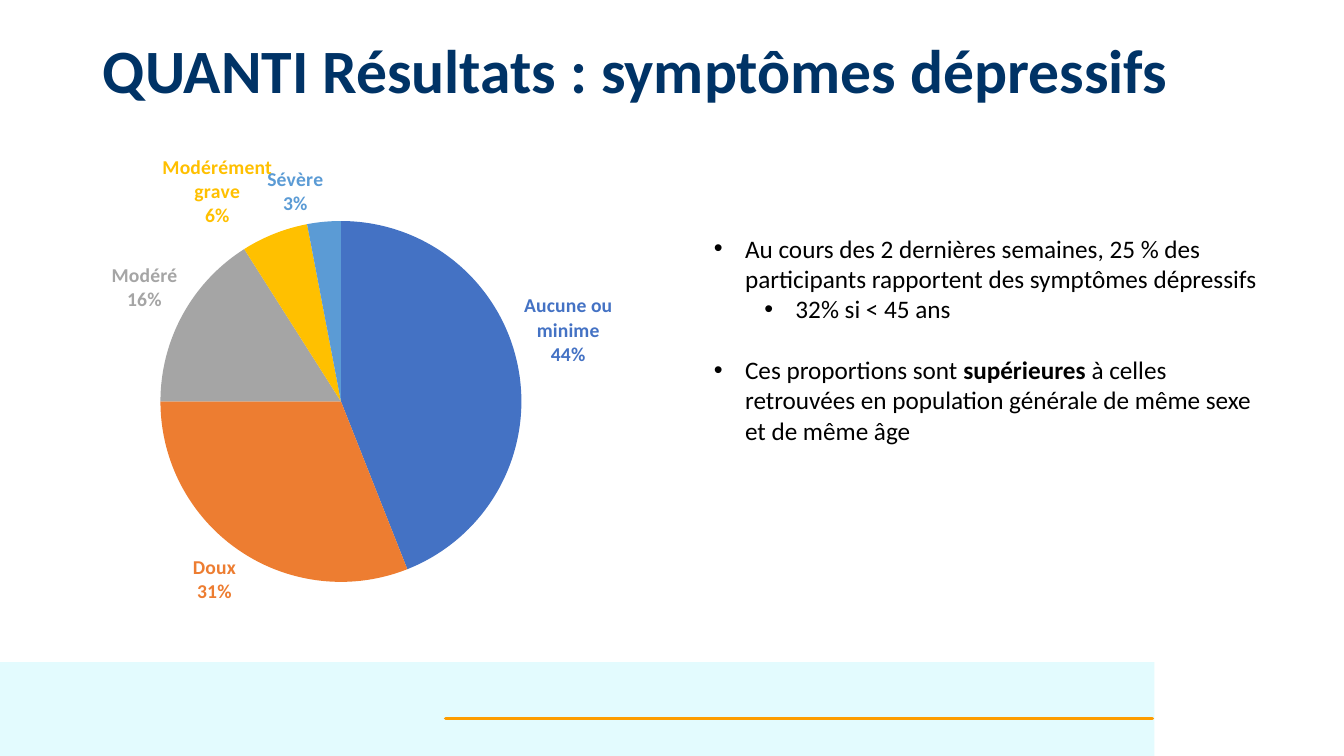
from lxml.etree import SubElement
from pptx import Presentation
from pptx.chart.data import CategoryChartData
from pptx.dml.color import RGBColor
from pptx.enum.chart import XL_CHART_TYPE, XL_LABEL_POSITION
from pptx.enum.shapes import MSO_CONNECTOR, MSO_SHAPE
from pptx.enum.text import MSO_ANCHOR, PP_ALIGN
from pptx.oxml import parse_xml
from pptx.oxml.ns import nsdecls, qn
from pptx.util import Inches, Pt

FONT = "Calibri"
NAVY = RGBColor(0x00, 0x33, 0x66)
BLACK = RGBColor(0x00, 0x00, 0x00)
PALE_CYAN = RGBColor(0xE3, 0xFB, 0xFE)
ORANGE = RGBColor(0xFD, 0x9C, 0x00)

SEVERITIES = [
    ("Aucune ou minime", 44, RGBColor(0x44, 0x72, 0xC4)),
    ("Doux", 31, RGBColor(0xED, 0x7D, 0x31)),
    ("Modéré", 16, RGBColor(0xA5, 0xA5, 0xA5)),
    ("Modérément grave", 6, RGBColor(0xFF, 0xC0, 0x00)),
    ("Sévère", 3, RGBColor(0x5B, 0x9B, 0xD5)),
]

FINDINGS = [
    (0, 0, [("Au cours des 2 dernières semaines, 25 % des participants "
             "rapportent des symptômes dépressifs", False)]),
    (1, 0, [("32% si < 45 ans", False)]),
    (0, 22, [("Ces proportions sont ", False), ("supérieures", True),
             (" à celles retrouvées en population générale de même sexe "
              "et de même âge", False)]),
]


def set_font(font, size, color=BLACK, bold=False):
    """Apply the slide's typeface with the given size, colour and weight."""
    font.name, font.size, font.bold = FONT, Pt(size), bold
    font.color.rgb = color


def add_text(paragraph, text, *, size=18, color=BLACK, bold=False):
    """Append a formatted run to a paragraph."""
    run = paragraph.add_run()
    run.text = text
    set_font(run.font, size, color, bold)


def place(shape, left, top, width, height):
    """Move a shape into a box given in inches."""
    shape.left, shape.top = Inches(left), Inches(top)
    shape.width, shape.height = Inches(width), Inches(height)


def add_footer(slide, left, top, width, height):
    """Draw the pale band and the orange rule that ends near its right edge."""
    band = slide.shapes.add_shape(MSO_SHAPE.RECTANGLE, Inches(left), Inches(top),
                                  Inches(width), Inches(height))
    band.shadow.inherit = False
    band.fill.solid()
    band.fill.fore_color.rgb = PALE_CYAN
    band.line.fill.background()

    rule_y = Inches(top + 0.56)
    rule = slide.shapes.add_connector(MSO_CONNECTOR.STRAIGHT, Inches(left + 4.42),
                                      rule_y, Inches(left + width - 0.02), rule_y)
    rule.line.color.rgb = ORANGE
    rule.line.width = Pt(2.5)
    rule.line._get_or_add_ln().set("cap", "rnd")
    SubElement(rule._element.spPr, qn("a:effectLst"))


def add_title(slide, left, top, width, height):
    """Fill the title placeholder."""
    title = slide.shapes.title
    place(title, left, top, width, height)
    title.text_frame.vertical_anchor = MSO_ANCHOR.MIDDLE
    heading = title.text_frame.paragraphs[0]
    heading.alignment = PP_ALIGN.LEFT
    heading.line_spacing = 0.9
    add_text(heading, "QUANTI Résultats : symptômes dépressifs",
             size=44, color=NAVY, bold=True)


def add_severity_pie(slide, left, top, width, height):
    """Chart the share of each severity level, labelled in its slice colour."""
    data = CategoryChartData()
    data.categories = [name for name, _, _ in SEVERITIES]
    data.add_series("Series 1", [share for _, share, _ in SEVERITIES])
    chart = slide.shapes.add_chart(XL_CHART_TYPE.PIE, Inches(left), Inches(top),
                                   Inches(width), Inches(height), data).chart
    chart.has_title = False
    chart.has_legend = False
    set_font(chart.font, 10)
    pie = chart.plots[0]
    pie.vary_by_categories = True

    for index, (_, _, color) in enumerate(SEVERITIES):
        slice_point = pie.series[0].points[index]
        slice_point.format.fill.solid()
        slice_point.format.fill.fore_color.rgb = color
        set_font(slice_point.data_label.font, 14, color, bold=True)
        slice_point.data_label.position = XL_LABEL_POSITION.OUTSIDE_END

    for label in chart.element.xpath(".//c:dLbl"):
        for tag, shown in (("showVal", "0"), ("showCatName", "1"), ("showPercent", "1")):
            label.find(qn(f"c:{tag}")).set("val", shown)
        SubElement(label, qn("c:separator")).text = "\n"

    plot_area = chart.element.xpath(".//c:plotArea")[0]
    for automatic in plot_area.findall(qn("c:layout")):
        plot_area.remove(automatic)
    bounds = "".join(f'<c:{tag} val="{value}"/>' for tag, value in (
        ("layoutTarget", "inner"), ("xMode", "edge"), ("yMode", "edge"),
        ("x", 0.228), ("y", 0.143), ("w", 0.513), ("h", 0.759)))
    plot_area.insert(0, parse_xml(
        f'<c:layout {nsdecls("c")}><c:manualLayout>{bounds}</c:manualLayout></c:layout>'))


def add_findings(slide, left, top, width, height):
    """Fill the body placeholder with the bulleted findings."""
    body = slide.placeholders[1]
    place(body, left, top, width, height)
    frame = body.text_frame
    frame.word_wrap = True
    frame.vertical_anchor = MSO_ANCHOR.TOP
    for index, (level, space_before, pieces) in enumerate(FINDINGS):
        finding = frame.add_paragraph() if index else frame.paragraphs[0]
        finding.level = level
        finding.line_spacing = 1.0
        finding.space_before, finding.space_after = Pt(space_before), Pt(0)
        properties = finding._p.get_or_add_pPr()
        properties.set("marL", str(Inches(0.31 + 0.5 * level)))
        properties.set("indent", str(Inches(-0.31)))
        SubElement(properties, qn("a:buFont")).set("typeface", "Arial")
        SubElement(properties, qn("a:buChar")).set("char", "•")
        for text, bold in pieces:
            add_text(finding, text, bold=bold)


def main():
    """Build and save the slide."""
    presentation = Presentation()
    presentation.slide_width, presentation.slide_height = Inches(13.33), Inches(7.5)
    slide = presentation.slides.add_slide(presentation.slide_layouts[1])
    add_footer(slide, 0, 6.57, 11.45, 0.93)
    add_title(slide, 0.92, 0, 11.5, 1.45)
    add_severity_pie(slide, 0, 1.45, 6.98, 4.85)
    add_findings(slide, 6.98, 2.26, 5.69, 2.22)
    presentation.save("out.pptx")


if __name__ == "__main__":
    main()
